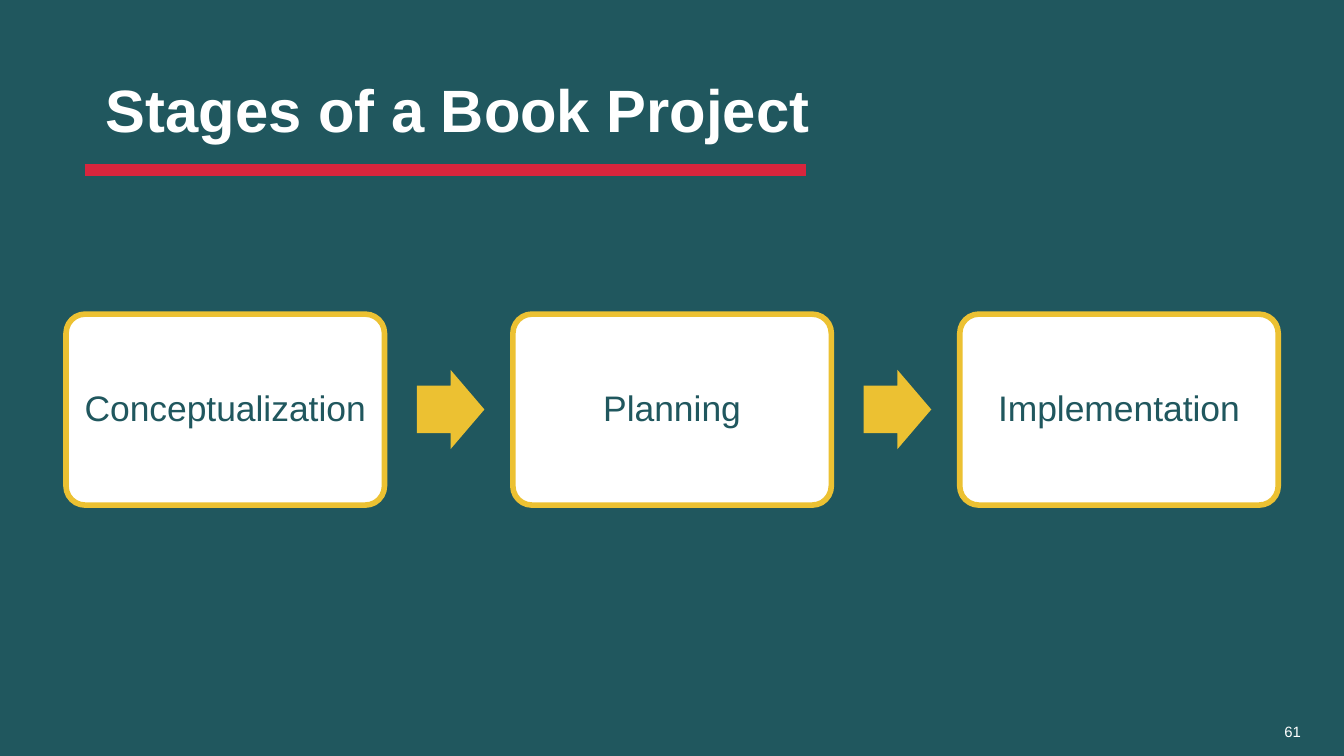
from dataclasses import dataclass

from lxml import etree
from pptx import Presentation
from pptx.dml.color import RGBColor
from pptx.enum import shapes, text
from pptx.oxml import ns
from pptx.util import Pt

TEAL = RGBColor(0x20, 0x57, 0x5E)
RED = RGBColor(0xD8, 0x25, 0x3D)
GOLD = RGBColor(0xEC, 0xC1, 0x32)
WHITE = RGBColor(0xFF, 0xFF, 0xFF)
FONT = "Arial"
STEP = 239.4  # from one stage to the next


@dataclass
class Box:
    left: float
    top: float
    width: float
    height: float

    def shift(self, count: int) -> "Box":
        return Box(self.left + count * STEP, self.top, self.width, self.height)

    def pts(self) -> list[Pt]:
        return [Pt(n) for n in (self.left, self.top, self.width, self.height)]


TITLE = Box(49.5, 21.6, 620.6, 78.3)
CARD = Box(35.4, 168.3, 170.6, 102.3)
ARROW = Box(223.3, 198.2, 36.2, 42.4)
NUMBER = Box(681, 383.6, 25.2, 17)
STAGES = ["Conceptualization", "Planning", "Implementation"]


def write(para, words: str, size: float, color: RGBColor) -> None:
    para.text = words
    para.font.name = FONT
    para.font.size = Pt(size)
    para.font.color.rgb = color


def add_title(slide, words: str) -> None:
    title = slide.shapes.title
    title.left, title.top, title.width, title.height = TITLE.pts()
    frame = title.text_frame
    frame.vertical_anchor = text.MSO_ANCHOR.MIDDLE
    para = frame.paragraphs[0]
    write(para, words, 32, WHITE)
    para.font.bold = True
    para.alignment = text.PP_ALIGN.LEFT
    para.line_spacing = 0.9


def add_rule(slide) -> None:
    """Draw the red line below the title."""
    rule = slide.shapes.add_connector(
        shapes.MSO_CONNECTOR.STRAIGHT, Pt(45.4), Pt(91.2), Pt(432), Pt(91.2))
    rule.line.color.rgb = RED
    rule.line.width = Pt(6.5)
    etree.SubElement(rule._element.spPr, ns.qn("a:effectLst"))


def add_card(slide, box: Box, words: str) -> None:
    card = slide.shapes.add_shape(shapes.MSO_SHAPE.ROUNDED_RECTANGLE, *box.pts())
    card.adjustments[0] = 0.1
    card.shadow.inherit = False
    card.fill.solid()
    card.fill.fore_color.rgb = WHITE
    card.line.color.rgb = GOLD
    card.line.width = Pt(3)
    frame = card.text_frame
    frame.word_wrap = True
    frame.vertical_anchor = text.MSO_ANCHOR.MIDDLE
    frame.margin_left = frame.margin_right = Pt(5.7)
    frame.margin_top = frame.margin_bottom = Pt(5.7)
    para = frame.paragraphs[0]
    write(para, words, 19, TEAL)
    para.alignment = text.PP_ALIGN.CENTER
    para.line_spacing = 0.9


def add_arrow(slide, box: Box) -> None:
    arrow = slide.shapes.add_shape(shapes.MSO_SHAPE.RIGHT_ARROW, *box.pts())
    arrow.adjustments[0] = 0.6
    arrow.adjustments[1] = 0.5
    arrow.shadow.inherit = False
    arrow.fill.solid()
    arrow.fill.fore_color.rgb = GOLD
    arrow.line.fill.background()


def add_number(slide, words: str) -> None:
    box = slide.shapes.add_textbox(*NUMBER.pts())
    box.text_frame.word_wrap = True
    write(box.text_frame.paragraphs[0], words, 8, WHITE)


def main() -> None:
    deck = Presentation()
    deck.slide_width, deck.slide_height = Pt(720), Pt(405)
    slide = deck.slides.add_slide(deck.slide_layouts[5])
    back = slide.background.fill
    back.solid()
    back.fore_color.rgb = TEAL

    add_rule(slide)
    add_title(slide, "Stages of a Book Project")
    for i, stage in enumerate(STAGES):
        if i:
            add_arrow(slide, ARROW.shift(i - 1))
        add_card(slide, CARD.shift(i), stage)
    add_number(slide, "61")
    deck.save("out.pptx")


if __name__ == "__main__":
    main()
